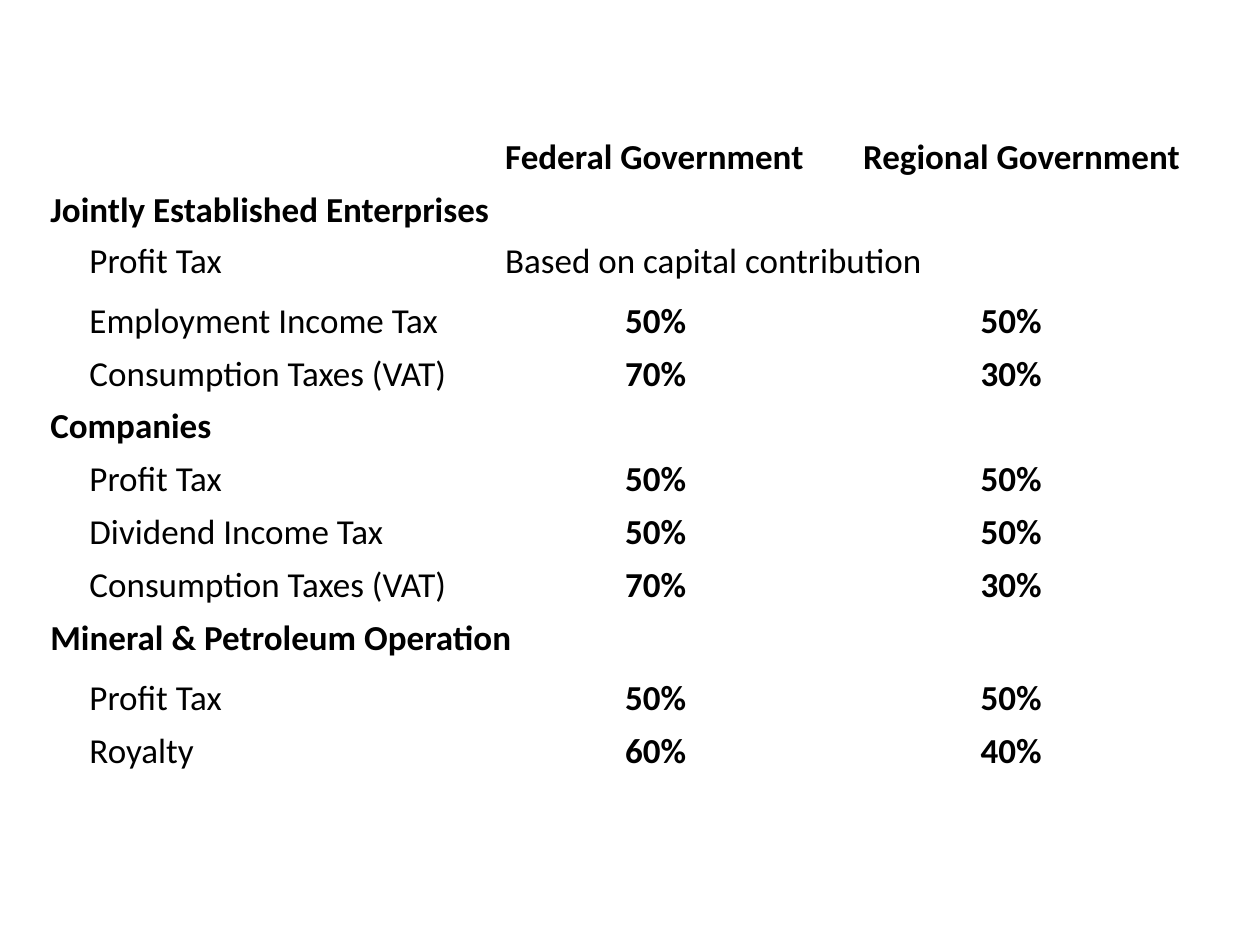
import pptx
import pptx.dml.color
import pptx.enum.text
import pptx.util
from dataclasses import dataclass

Inches = pptx.util.Inches
Align = pptx.enum.text.PP_ALIGN


@dataclass(frozen=True)
class Theme:
    font: str = "Calibri"
    size: int = 20
    text: str = "000000"
    margin: float = 0.07
    indent: float = 0.31


theme = Theme()

headings = ["", "Federal Government", "Regional Government"]
# Each section: title, columns its title spans, and its taxes with their shares
sections = [
    ("Jointly Established Enterprises", 2, [
        ("Profit Tax", "Based on capital contribution"),
        ("Employment Income Tax", "50%", "50%"),
        ("Consumption Taxes (VAT)", "70%", "30%"),
    ]),
    ("Companies", 1, [
        ("Profit Tax", "50%", "50%"),
        ("Dividend Income Tax", "50%", "50%"),
        ("Consumption Taxes (VAT)", "70%", "30%"),
    ]),
    ("Mineral & Petroleum Operation", 3, [
        ("Profit Tax", "50%", "50%"),
        ("Royalty", "60%", "40%"),
    ]),
]
column_widths = [3.61, 2.53, 3.11]
row_heights = [0.42, 0.41, 0.47] + [0.42] * 6 + [0.48] + [0.42] * 2

deck = pptx.Presentation()
deck.slide_width, deck.slide_height = Inches(10), Inches(7.5)
slide = deck.slides.add_slide(deck.slide_layouts[6])
revenue_shares = slide.shapes.add_table(
    len(row_heights), len(column_widths), Inches(0.33), Inches(1.08),
    Inches(sum(column_widths)), Inches(sum(row_heights))).table
revenue_shares.first_row = revenue_shares.horz_banding = False

for column, width in zip(revenue_shares.columns, column_widths):
    column.width = Inches(width)
for row, height in zip(revenue_shares.rows, row_heights):
    row.height = Inches(height)
for cell in revenue_shares.iter_cells():
    cell.fill.background()
    cell.margin_left = cell.margin_right = Inches(theme.margin)
    cell.margin_top = cell.margin_bottom = 0


def write(row, column, words, bold=True, align=Align.JUSTIFY, indented=False):
    cell = revenue_shares.cell(row, column)
    if indented:
        cell.margin_left = Inches(theme.margin + theme.indent)
    paragraph = cell.text_frame.paragraphs[0]
    paragraph.alignment = align
    run = paragraph.add_run()
    run.text = words
    formats = {"name": theme.font, "size": pptx.util.Pt(theme.size), "bold": bold}
    for attribute, value in formats.items():
        setattr(run.font, attribute, value)
    run.font.color.rgb = pptx.dml.color.RGBColor.from_string(theme.text)


def span(row, first, last):
    revenue_shares.cell(row, first).merge(revenue_shares.cell(row, last))


for column, heading in enumerate(headings):
    if heading:
        write(0, column, heading, indented=column == 2)

row = 1
for title, title_span, taxes in sections:
    if title_span > 1:
        span(row, 0, title_span - 1)
    else:
        span(row, 1, 2)
    write(row, 0, title, align=Align.LEFT)
    row += 1
    for tax, *shares in taxes:
        write(row, 0, tax, bold=False, indented=True)
        if len(shares) == 1:
            span(row, 1, 2)
            write(row, 1, shares[0], bold=False)
        else:
            for column, share in enumerate(shares, start=1):
                write(row, column, share, align=Align.CENTER)
        row += 1

deck.save("out.pptx")
